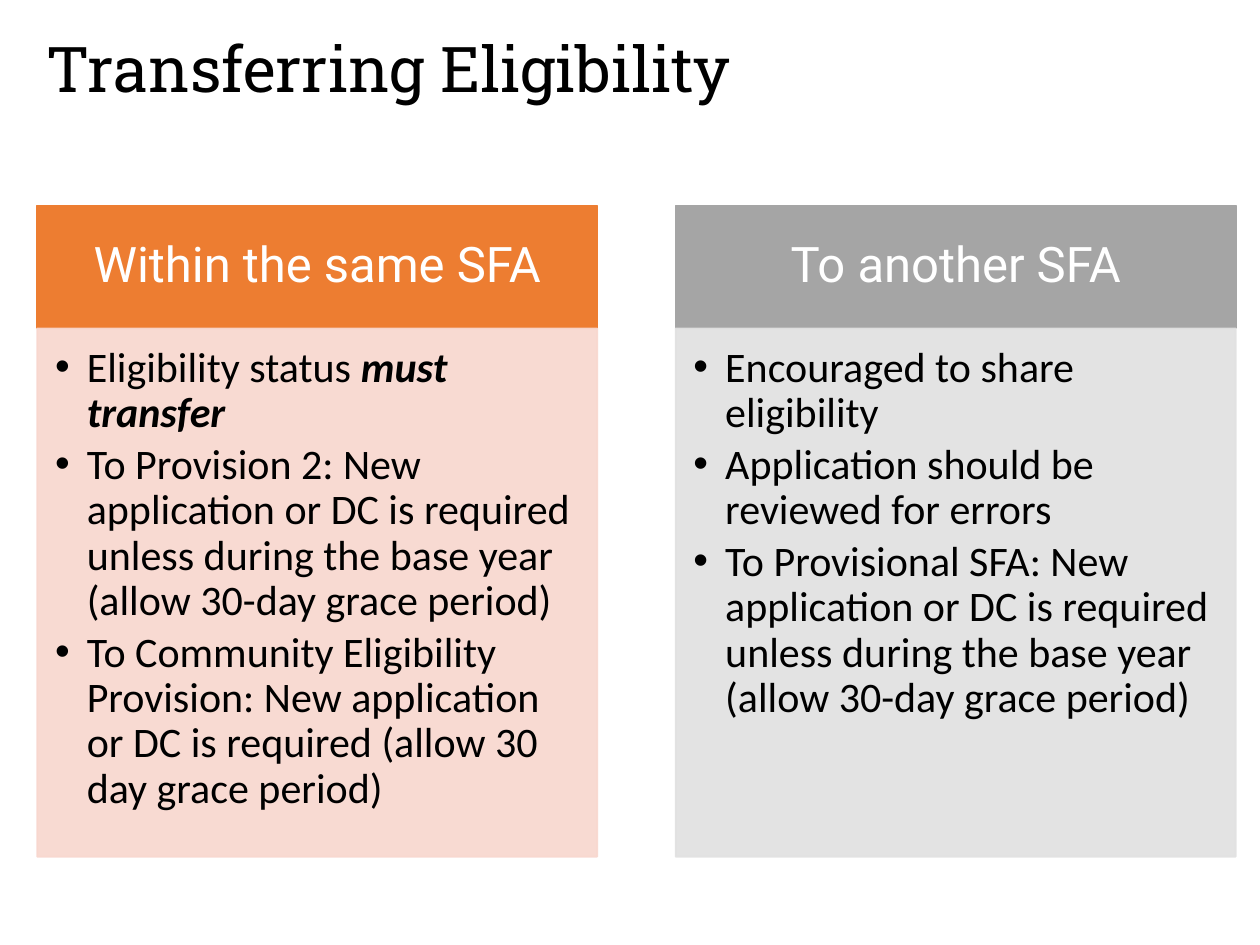
import pptx
import pptx.dml.color
import pptx.enum.text
import pptx.oxml.ns
import pptx.util
from lxml import etree
from pptx.util import Cm, Pt

# Content: each bullet is a list of (text, emphasised) runs
TITLE = "Transferring Eligibility"
COLUMNS = [
    {
        "heading": "Within the same SFA", "dark": "ED7D31", "light": "F8D7CE",
        "bullets": [
            [("Eligibility status ", False), ("must transfer", True)],
            [("To Provision 2: New application or DC is required unless during "
              "the base year (allow 30-day grace period)", False)],
            [("To Community Eligibility Provision: New application or DC is "
              "required (allow 30 day grace period)", False)],
        ],
    },
    {
        "heading": "To another SFA", "dark": "A5A5A5", "light": "E1E1E1",
        "bullets": [
            [("Encouraged to share eligibility", False)],
            [("Application should be reviewed for errors", False)],
            [("To Provisional SFA: New application or DC is required unless during "
              "the base year (allow 30-day grace period)", False)],
        ],
    },
]

# Layout in centimetres
LEFT, TOP, WIDTH, PITCH = 0.75, 4.14, 11.29, 12.87
HEADING_HEIGHT, BODY_HEIGHT = 2.48, 10.65
INDENT = Cm(0.64)

ANCHOR = pptx.enum.text.MSO_ANCHOR
ALIGN = pptx.enum.text.PP_ALIGN


def color(value):
    return pptx.dml.color.RGBColor.from_string(value)


def place(shape, left, top, width, height, insets, anchor):
    shape.left, shape.top, shape.width, shape.height = map(Cm, (left, top, width, height))
    frame = shape.text_frame
    frame.word_wrap = True
    frame.auto_size = pptx.enum.text.MSO_AUTO_SIZE.NONE
    frame.vertical_anchor = anchor
    (frame.margin_left, frame.margin_top,
     frame.margin_right, frame.margin_bottom) = map(Cm, insets)


def paint(shape, value, opacity=100):
    shape.fill.solid()
    shape.fill.fore_color.rgb = color(value)
    shape.line.color.rgb = color(value)
    shape.line.width = Pt(1)
    if opacity < 100:
        for tint in shape._element.spPr.iter(pptx.oxml.ns.qn("a:srgbClr")):
            etree.SubElement(tint, pptx.oxml.ns.qn("a:alpha"), val=str(opacity * 1000))


def style(paragraph, font, size, value, align, after=0):
    paragraph.alignment = align
    paragraph.line_spacing = 0.9
    paragraph.space_before = Pt(0)
    paragraph.space_after = Pt(after)
    for run in paragraph.runs:
        run.font.name = font
        run.font.size = Pt(size)
        run.font.bold = False
        run.font.color.rgb = color(value)


def add_bullet(paragraph, runs):
    properties = paragraph._p.get_or_add_pPr()
    properties.set("marL", str(INDENT))
    properties.set("indent", str(-INDENT))
    etree.SubElement(properties, pptx.oxml.ns.qn("a:buChar"), char="•")
    for text, _ in runs:
        paragraph.add_run().text = text
    style(paragraph, "Calibri", 24, "000000", ALIGN.LEFT, after=3.6)
    for run, (_, emphasised) in zip(paragraph.runs, runs):
        run.font.bold = run.font.italic = emphasised


presentation = pptx.Presentation()
presentation.slide_width, presentation.slide_height = Cm(25.4), Cm(19.05)
comparison_layout = presentation.slide_layouts[4]
slide = presentation.slides.add_slide(comparison_layout)

# Title
title = slide.shapes.title
title.text_frame.text = TITLE
place(title, 0.69, 0.71, 16.89, 2.11, (0.25, 0.05, 0.25, 0.05), ANCHOR.TOP)
style(title.text_frame.paragraphs[0], "Roboto Slab", 36, "000000", ALIGN.LEFT)

# Two columns, each a heading above a list
for index, column in enumerate(COLUMNS):
    left = LEFT + index * PITCH
    heading = slide.placeholders[1 + 2 * index]
    heading.text_frame.text = column["heading"]
    place(heading, left, TOP, WIDTH, HEADING_HEIGHT, (0.56, 0.3, 0.56, 0.3), ANCHOR.MIDDLE)
    paint(heading, column["dark"])
    style(heading.text_frame.paragraphs[0], "Roboto", 28, "FFFFFF", ALIGN.CENTER)

    body = slide.placeholders[2 + 2 * index]
    place(body, left, TOP + HEADING_HEIGHT, WIDTH, BODY_HEIGHT,
          (0.36, 0.36, 0.48, 0.53), ANCHOR.TOP)
    paint(body, column["light"], opacity=90)
    for number, runs in enumerate(column["bullets"]):
        frame = body.text_frame
        add_bullet(frame.add_paragraph() if number else frame.paragraphs[0], runs)

presentation.save("out.pptx")
